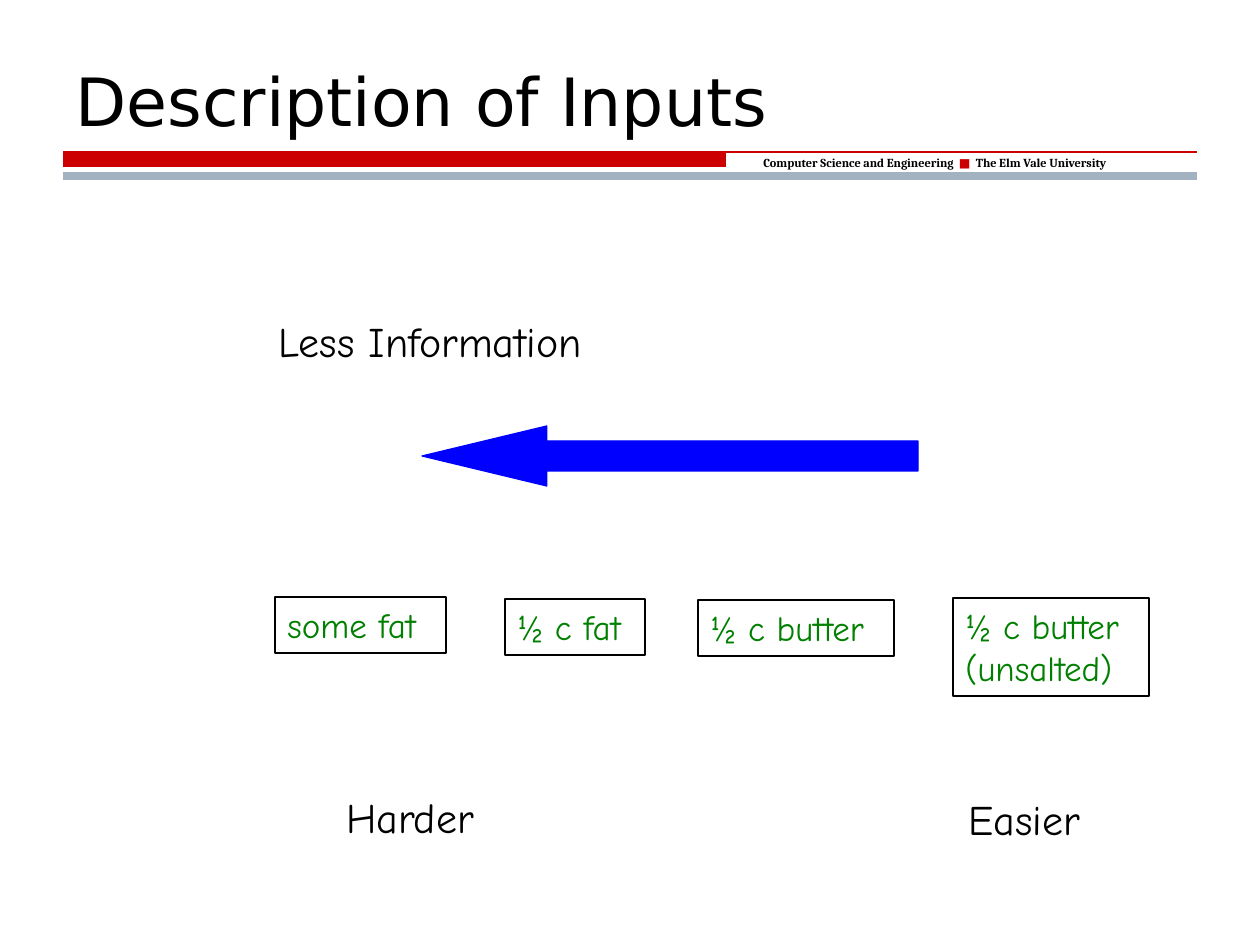
import dataclasses

import pptx
import pptx.dml.color
import pptx.enum.shapes
import pptx.enum.text
import pptx.oxml.xmlchemy
import pptx.util
from lxml import etree

SCALE = 914400 / 126  # EMU per px
SLIDE_W, SLIDE_H = 1260, 945
DRAWING_NS = "http://schemas.openxmlformats.org/drawingml/2006/main"


@dataclasses.dataclass(frozen=True)
class Theme:
    text: str = "000000"
    red: str = "CC0000"
    gray: str = "A3B2C1"
    arrow: str = "0000FF"
    inputs: str = "008000"
    title_font: str = "DejaVu Sans"
    brand_font: str = "Cambria"
    body_font: str = "Comic Neue"
    title_size: int = 38
    label_size: int = 24
    input_size: int = 20
    brand_size: int = 7
    hairline: float = 0.75
    rule: float = 4.5


THEME = Theme()


def px(value):
    return pptx.util.Emu(round(value * SCALE))


def rgb(color):
    return pptx.dml.color.RGBColor.from_string(color)


def style_run(run, font, size, color, bold=False):
    run.font.name = font
    run.font.size = pptx.util.Pt(size)
    run.font.color.rgb = rgb(color)
    run.font.bold = bold


def write(frame, text, font, size, color):
    frame.text = text
    for paragraph in frame.paragraphs:
        paragraph.alignment = pptx.enum.text.PP_ALIGN.LEFT
        for run in paragraph.runs:
            style_run(run, font, size, color)


def add_box(slide, left, top, width, height):
    return slide.shapes.add_textbox(px(left), px(top), px(width), px(height))


def add_block(slide, kind, left, top, width, height, fill=None, line=None):
    block = slide.shapes.add_shape(kind, px(left), px(top), px(width), px(height))
    block.shadow.inherit = False
    if fill:
        block.fill.solid()
        block.fill.fore_color.rgb = rgb(fill)
    else:
        block.fill.background()
    if line:
        block.line.color.rgb = rgb(line)
        block.line.width = pptx.util.Pt(THEME.hairline)
    else:
        block.line.fill.background()
    return block


def add_rule(slide, left, top, width, color, weight):
    rule = slide.shapes.add_connector(
        pptx.enum.shapes.MSO_CONNECTOR.STRAIGHT,
        px(left), px(top), px(left + width), px(top))
    rule.line.color.rgb = rgb(color)
    rule.line.width = pptx.util.Pt(weight)
    etree.SubElement(rule._element.spPr, f"{{{DRAWING_NS}}}effectLst")


def fit_unwrapped(frame):
    frame.word_wrap = False
    frame.auto_size = pptx.enum.text.MSO_AUTO_SIZE.SHAPE_TO_FIT_TEXT


def add_header(slide, left, top, width):
    # Red band, hairline and gray rule
    add_block(slide, pptx.enum.shapes.MSO_SHAPE.RECTANGLE,
              left, top + 121, 663, 15, fill=THEME.red)
    add_rule(slide, left, top + 121, width, THEME.red, THEME.hairline)
    add_rule(slide, left, top + 145, width, THEME.gray, THEME.rule)

    # Department and university
    brand = add_box(slide, left + 688, top + 118, 433, 28).text_frame
    brand.word_wrap = True
    for text, font, color, bold in (
            ("Computer Science and Engineering  ", THEME.brand_font, THEME.text, True),
            ("■", THEME.title_font, THEME.red, False),
            ("  The Elm Vale University", THEME.brand_font, THEME.text, True)):
        run = brand.paragraphs[0].add_run()
        run.text = text
        style_run(run, font, THEME.brand_size, color, bold)

    # Title
    title = add_box(slide, left, top, width, 115).text_frame
    title.word_wrap = True
    title.vertical_anchor = pptx.enum.text.MSO_ANCHOR.BOTTOM
    write(title, "Description of Inputs", THEME.title_font, THEME.title_size, THEME.text)


def add_spectrum(slide, left, top):
    # Arrow towards less information
    arrow = add_block(slide, pptx.enum.shapes.MSO_SHAPE.LEFT_ARROW,
                      left + 147, top + 117, 496, 60, THEME.arrow, THEME.arrow)
    arrow.adjustments[0] = 0.5
    arrow.adjustments[1] = 2.08

    # Labels at the ends of the scale
    for text, x, y, width in (("Less Information", -9, 0, 363),
                              ("Harder", 59, 476, 166),
                              ("Easier", 681, 478, 149)):
        label = add_box(slide, left + x, top + y, width, 63).text_frame
        fit_unwrapped(label)
        write(label, text, THEME.body_font, THEME.label_size, THEME.text)

    # Inputs, from vague to exact
    for text, x, y, width, height in (("some fat", 0, 288, 171, 56),
                                      ("½ c fat", 230, 290, 140, 56),
                                      ("½ c butter", 423, 291, 196, 56),
                                      ("½ c butter\n(unsalted)", 678, 289, 196, 98)):
        choice = add_block(slide, pptx.enum.shapes.MSO_SHAPE.RECTANGLE,
                           left + x, top + y, width, height, line=THEME.text)
        frame = choice.text_frame
        fit_unwrapped(frame)
        frame.vertical_anchor = pptx.enum.text.MSO_ANCHOR.TOP
        write(frame, text, THEME.body_font, THEME.input_size, THEME.inputs)


def main():
    deck = pptx.Presentation()
    deck.slide_width, deck.slide_height = px(SLIDE_W), px(SLIDE_H)
    slide = deck.slides.add_slide(deck.slide_layouts[6])
    add_header(slide, 63, 31, SLIDE_W - 2 * 63)
    add_spectrum(slide, 275, 309)
    deck.save("out.pptx")


if __name__ == "__main__":
    main()
